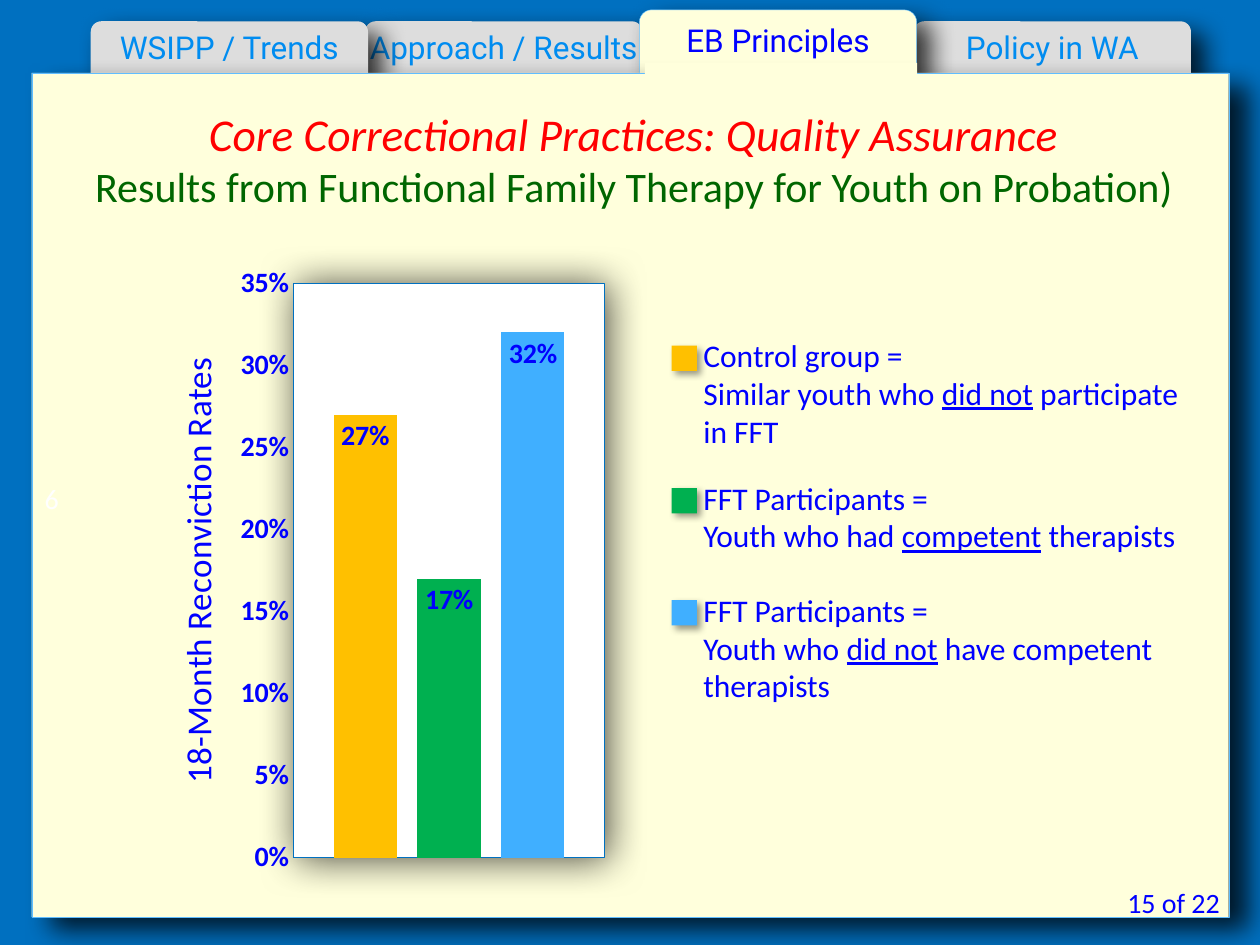
from dataclasses import dataclass

from pptx import Presentation
from pptx.chart.data import CategoryChartData
from pptx.dml.color import RGBColor
from pptx.enum.chart import XL_CHART_TYPE, XL_LABEL_POSITION, XL_TICK_MARK
from pptx.enum.shapes import MSO_SHAPE
from pptx.enum.text import MSO_ANCHOR, PP_ALIGN
from pptx.oxml import parse_xml
from pptx.oxml.ns import nsdecls, qn
from pptx.util import Cm, Pt

RECT, ROUND = MSO_SHAPE.RECTANGLE, MSO_SHAPE.ROUNDED_RECTANGLE
LEFT, CENTER, RIGHT = PP_ALIGN.LEFT, PP_ALIGN.CENTER, PP_ALIGN.RIGHT
TOP, MIDDLE = MSO_ANCHOR.TOP, MSO_ANCHOR.MIDDLE
COLUMN, INSIDE_END = XL_CHART_TYPE.COLUMN_CLUSTERED, XL_LABEL_POSITION.INSIDE_END
NO_TICK = XL_TICK_MARK.NONE


@dataclass(frozen=True)
class Theme:
    """Colours, fonts, type sizes and shadows of the slide."""
    back: str = "0070C0"
    panel: str = "FFFFDC"
    edge: str = "60BDFF"
    tab: str = "DDDDDD"
    tab_text: str = "008CF0"
    text: str = "0000FF"
    title: str = "FF0000"
    subtitle: str = "006600"
    white: str = "FFFFFF"
    control: str = "FFC000"
    competent: str = "00B050"
    not_competent: str = "40AFFF"
    body_font: str = "Calibri"
    tab_font: str = "Roboto"
    title_size: int = 26
    subtitle_size: int = 24
    axis_size: int = 20
    body_size: int = 18
    small_size: int = 16
    tab_shadow: tuple = (79, 15, 10, 40)
    panel_shadow: tuple = (79, 15, 14, 36)
    plot_shadow: tuple = (71, 23, 2, 20)
    item_shadow: tuple = (40, 4, 3, 45)


class SlideBuilder:
    """Holds the theme and the current slide, and adds each kind of element."""

    def __init__(self, prs, theme):
        self.theme = theme
        self.s = prs.slides.add_slide(prs.slide_layouts[5])
        fill = self.s.background.fill
        fill.solid()
        fill.fore_color.rgb = RGBColor.from_string(theme.back)

    def style(self, font, size, color=None, name=None, bold=False, italic=False):
        font.name, font.size = name or self.theme.body_font, Pt(size)
        font.color.rgb = RGBColor.from_string(color or self.theme.text)
        font.bold, font.italic = bold, italic

    def shape(self, kind, box, color, shadow=None, line=None, width=0.25):
        sp = self.s.shapes.add_shape(kind, *map(Cm, box))
        sp.shadow.inherit = False
        sp.fill.solid()
        sp.fill.fore_color.rgb = RGBColor.from_string(color)
        if line:
            sp.line.color.rgb = RGBColor.from_string(line)
            sp.line.width = Pt(width)
        else:
            sp.line.fill.background()
        if shadow:
            alpha, blur, dist, angle = shadow
            effects = sp.element.spPr.find(qn("a:effectLst"))
            effects.append(parse_xml(
                f'<a:outerShdw {nsdecls("a")} blurRad="{Pt(blur)}" dist="{Pt(dist)}" '
                f'dir="{angle * 60000}" algn="tl" rotWithShape="0"><a:srgbClr val="000000">'
                f'<a:alpha val="{alpha * 1000}"/></a:srgbClr></a:outerShdw>'))
        return sp

    def frame(self, tf, margins=(0, 0, 0, 0), anchor=TOP):
        tf.word_wrap, tf.vertical_anchor = True, anchor
        tf.margin_left, tf.margin_top, tf.margin_right, tf.margin_bottom = map(Cm, margins)

    def tab(self, box, text, active=False):
        t = self.theme
        sp = self.shape(ROUND, box, t.panel if active else t.tab, t.tab_shadow,
                        t.edge if active else None)
        self.frame(sp.text_frame, (0, 0, 0, 0.25), MIDDLE)
        p = sp.text_frame.paragraphs[0]
        p.text, p.alignment = text, CENTER
        self.style(p.font, t.body_size, t.text if active else t.tab_text, t.tab_font)

    def title(self, box, lines):
        sp = self.s.shapes.title
        sp.element.getparent().append(sp.element)
        sp.left, sp.top, sp.width, sp.height = map(Cm, box)
        tf = sp.text_frame
        self.frame(tf, (0.25, 0.13, 0.25, 0.13), MIDDLE)
        tf.text = "\n".join(text for text, *_ in lines)
        for p, (_, size, color, italic) in zip(tf.paragraphs, lines):
            p.alignment = CENTER
            self.style(p.font, size, color, italic=italic)

    def text(self, box, lines, size, color=None, align=LEFT):
        tf = self.s.shapes.add_textbox(*map(Cm, box)).text_frame
        self.frame(tf)
        for i, parts in enumerate(lines):
            p = tf.paragraphs[0] if i == 0 else tf.add_paragraph()
            p.alignment = align
            self.style(p.font, size, color)
            for j, part in enumerate(parts):
                r = p.add_run()
                r.text = part
                if j % 2:
                    r.font.underline = True

    def legend(self, left, top, color, lines):
        self.shape(RECT, (left, top + 0.19, 0.51, 0.51), color, self.theme.item_shadow)
        self.text((left + 0.64, top, 9.8, 2.3), lines, self.theme.body_size)

    def chart(self, box, plot, axis_title, series):
        t = self.theme
        self.shape(RECT, plot, t.white, t.plot_shadow, t.back, 0.75)
        data = CategoryChartData(number_format="0%")
        data.categories = [axis_title]
        for name, value, _ in series:
            data.add_series(name, [value])
        chart = self.s.shapes.add_chart(COLUMN, *map(Cm, box), data).chart
        chart.has_title = chart.has_legend = False
        self.style(chart.font, t.small_size, bold=True)
        self.chart_layout(chart, box, plot)
        chart.category_axis.visible = False
        axis = chart.value_axis
        axis.minimum_scale, axis.maximum_scale, axis.major_unit = 0, 0.35, 0.05
        axis.has_major_gridlines = False
        axis.major_tick_mark = NO_TICK
        axis.format.line.color.rgb = RGBColor.from_string(t.back)
        axis.tick_labels.number_format = "0%"
        axis.tick_labels.number_format_is_linked = False
        p = axis.axis_title.text_frame.paragraphs[0]
        p.text = axis_title
        self.style(p.font, t.axis_size)
        bars = chart.plots[0]
        bars.gap_width, bars.overlap, bars.vary_by_categories = 127, -33, False
        bars.has_data_labels = True
        labels = bars.data_labels
        labels.show_value, labels.position = True, INSIDE_END
        labels.number_format, labels.number_format_is_linked = "0%", False
        self.style(labels.font, t.small_size, bold=True)
        for ser, (_, _, color) in zip(bars.series, series):
            ser.format.fill.solid()
            ser.format.fill.fore_color.rgb = RGBColor.from_string(color)

    def chart_layout(self, chart, box, plot):
        x, y, w, h = box
        px, py, pw, ph = plot
        parts = {"x": (px - x) / w, "y": (py - y) / h, "w": pw / w, "h": ph / h}
        values = "".join(f'<c:{k} val="{v:.4f}"/>' for k, v in parts.items())
        area = chart.element.chart.plotArea
        for old in area.findall(qn("c:layout")):
            area.remove(old)
        area.insert(0, parse_xml(
            f'<c:layout {nsdecls("c")}><c:manualLayout><c:layoutTarget val="inner"/>'
            f'<c:xMode val="edge"/><c:yMode val="edge"/>{values}</c:manualLayout></c:layout>'))
        chart.element.chart.addnext(parse_xml(
            f'<c:spPr {nsdecls("c", "a")}><a:noFill/><a:ln><a:noFill/></a:ln></c:spPr>'))


def main():
    t = Theme()
    prs = Presentation()
    prs.slide_width, prs.slide_height = Cm(25.4), Cm(19.05)
    b = SlideBuilder(prs, t)

    tabs = ["WSIPP / Trends", "Approach / Results", "EB Principles", "Policy in WA"]
    active = 2
    for i in (3, 1, 0, active):
        top, height = (0.2, 1.48) if i == active else (0.43, 1.27)
        b.tab((1.83 + 5.53 * i, top, 5.59, height), tabs[i], i == active)
    b.shape(RECT, (0.64, 1.47, 24.13, 17.02), t.panel, t.panel_shadow, t.edge, 0.05)
    b.title((1.07, 1.7, 23.42, 2.97), [
        ("Core Correctional Practices: Quality Assurance", t.title_size, t.title, True),
        ("Results from Functional Family Therapy for Youth on Probation)",
         t.subtitle_size, t.subtitle, False)])

    b.chart((2.95, 5.1, 9.5, 12.8), (5.92, 5.71, 6.27, 11.58), "18-Month Reconviction Rates", [
        ("Control group", 0.27, t.control),
        ("Competent therapists", 0.17, t.competent),
        ("Not competent therapists", 0.32, t.not_competent)])

    participants = ["FFT Participants ="]
    for top, color, lines in [
        (6.78, t.control, [["Control group ="],
                           ["Similar youth who ", "did not", " participate in FFT"]]),
        (9.65, t.competent, [participants, ["Youth who had ", "competent", " therapists"]]),
        (11.91, t.not_competent, [participants,
                                  ["Youth who ", "did not", " have competent therapists"]]),
    ]:
        b.legend(13.54, top, color, lines)

    b.text((0.9, 9.7, 0.6, 0.7), [["6"]], t.small_size, t.white)
    b.text((21.39, 17.85, 3.2, 0.7), [["15 of 22"]], t.small_size, align=RIGHT)
    b.shape(RECT, (13, 1.27, 5.49, 0.28), t.panel)
    prs.save("out.pptx")


if __name__ == "__main__":
    main()
